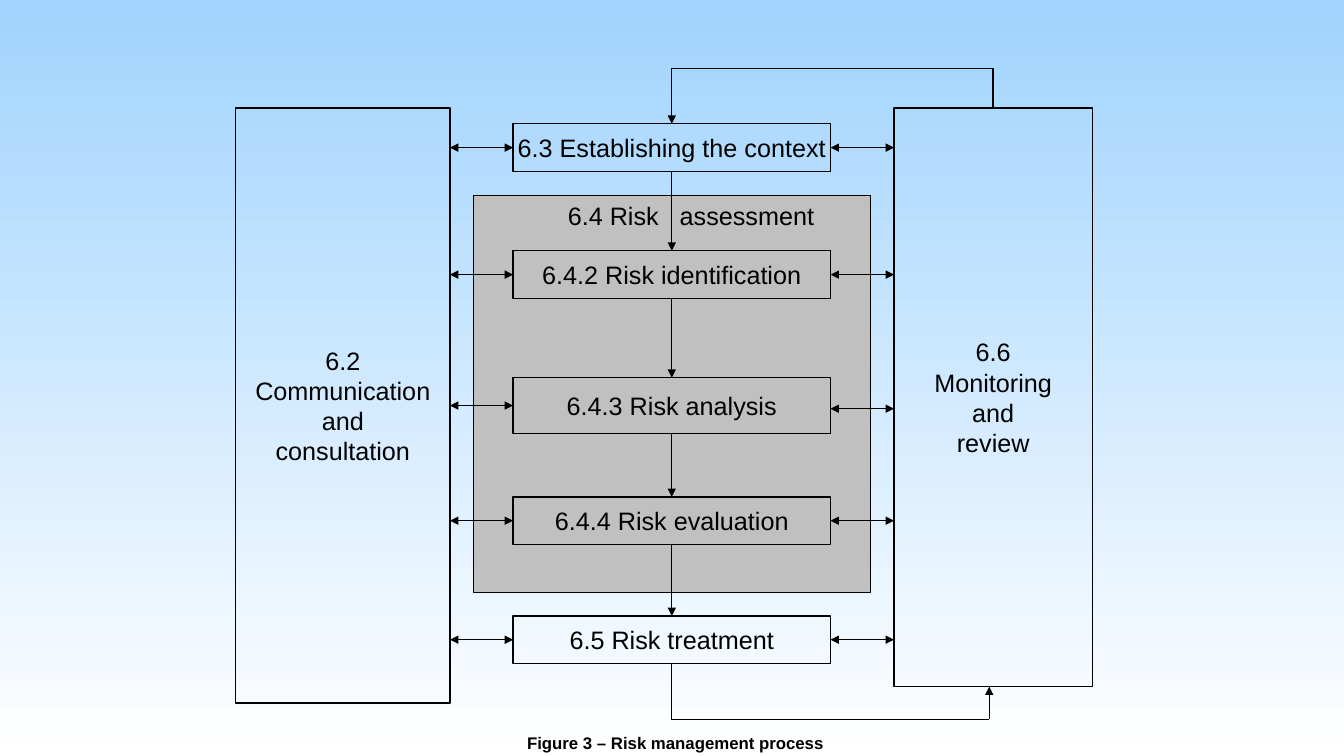
from dataclasses import dataclass
from itertools import pairwise
from typing import NamedTuple

from lxml.etree import SubElement
from pptx import Presentation
from pptx.dml.color import RGBColor
from pptx.enum.shapes import MSO_CONNECTOR as Connector, MSO_SHAPE as Preset
from pptx.enum.text import MSO_ANCHOR as Anchor, PP_ALIGN as Align
from pptx.oxml.ns import qn
from pptx.util import Cm, Pt


@dataclass(frozen=True)
class Theme:
    font: str = "Arial"
    ink: RGBColor = RGBColor(0, 0, 0)
    panel: RGBColor = RGBColor(0xC0, 0xC0, 0xC0)
    sky: RGBColor = RGBColor(0xA0, 0xD3, 0xFE)
    ground: RGBColor = RGBColor(0xFF, 0xFF, 0xFF)
    label_size: int = 18
    caption_size: int = 12
    line_width: int = 1


class Box(NamedTuple):
    """A rectangle in centimetres."""
    left: float
    top: float
    width: float
    height: float

    @property
    def right(self):
        return self.left + self.width

    @property
    def bottom(self):
        return self.top + self.height

    @property
    def center(self):
        return self.left + self.width / 2

    @property
    def middle(self):
        return self.top + self.height / 2

    def lengths(self):
        return [Cm(value) for value in self]


THEME = Theme()
SLIDE_WIDTH, SLIDE_HEIGHT = 33.87, 19.05
COMMUNICATION = Box(5.94, 2.72, 5.4, 15)
MONITORING = Box(22.53, 2.72, 5, 14.58)
ASSESSMENT = Box(11.94, 4.93, 10, 10)
STEP_COLUMN = Box(12.93, 3.12, 8, 13.6)
CAPTION = Box(7.92, 18.34, 18.21, 0.76)
# Label, offset from the column top, height, drop of the arrow to monitoring
STEPS = [
    ("6.3 Establishing the context", 0, 1.2, 0),
    ("6.4.2 Risk identification", 3.2, 1.2, 0),
    ("6.4.3 Risk analysis", 6.4, 1.4, 0.08),
    ("6.4.4 Risk evaluation", 9.4, 1.2, 0),
    ("6.5 Risk treatment", 12.4, 1.2, 0),
]


def write_text(shape, text, *, size=THEME.label_size, bold=False, align=Align.CENTER,
               anchor=Anchor.MIDDLE, wrap=False, indent=None, tab=None):
    """Fill a shape with one paragraph per line of text; indent and tab are in cm."""
    frame = shape.text_frame
    frame.word_wrap = wrap
    frame.vertical_anchor = anchor
    if indent is not None:
        frame.margin_left = Cm(indent)
    for index, line in enumerate(text.split("\n")):
        paragraph = frame.add_paragraph() if index else frame.paragraphs[0]
        paragraph.alignment = align
        if tab is not None:
            tab_list = SubElement(paragraph._p.get_or_add_pPr(), qn("a:tabLst"))
            SubElement(tab_list, qn("a:tab"), pos=str(Cm(tab)), algn="l")
        run = paragraph.add_run()
        run.text = line
        run.font.name = THEME.font
        run.font.size = Pt(size)
        run.font.bold = bold
        run.font.color.rgb = THEME.ink


def add_box(slide, box, text, fill=None, **text_format):
    shape = slide.shapes.add_shape(Preset.RECTANGLE, *box.lengths())
    shape.shadow.inherit = False
    if fill is None:
        shape.fill.background()
    else:
        shape.fill.solid()
        shape.fill.fore_color.rgb = fill
    shape.line.color.rgb = THEME.ink
    shape.line.width = Pt(THEME.line_width)
    write_text(shape, text, **text_format)


def add_line(slide, start, end, *, head=False, tail=False, bent=False):
    """Join two points; a bent line runs horizontally first, then vertically."""
    kind = Connector.ELBOW if bent else Connector.STRAIGHT
    connector = slide.shapes.add_connector(kind, *(Cm(value) for value in (*start, *end)))
    connector.line.color.rgb = THEME.ink
    connector.line.width = Pt(THEME.line_width)
    properties = connector.element.spPr
    if bent:
        properties.find(qn("a:prstGeom")).set("prst", "bentConnector2")
    for wanted, tag in ((head, "a:headEnd"), (tail, "a:tailEnd")):
        if wanted:
            SubElement(properties.find(qn("a:ln")), qn(tag), type="triangle")
    SubElement(properties, qn("a:effectLst"))


def add_background(slide):
    fill = slide.background.fill
    fill.gradient()
    fill.gradient_angle = 270
    for stop, color in zip(fill.gradient_stops, (THEME.sky, THEME.ground)):
        stop.color.rgb = color


def add_steps(slide, column):
    """Place the process steps, the arrows between them and those to both sides."""
    boxes = [Box(column.left, column.top + offset, column.width, height)
             for _, offset, height, _ in STEPS]
    for (label, _, _, drop), box in zip(STEPS, boxes):
        add_box(slide, box, label)
        add_line(slide, (box.left, box.middle), (COMMUNICATION.right, box.middle),
                 head=True, tail=True)
        add_line(slide, (MONITORING.left, box.middle + drop), (box.right, box.middle + drop),
                 head=True, tail=True)
    for upper, lower in pairwise(boxes):
        add_line(slide, (column.center, upper.bottom), (column.center, lower.top), tail=True)


def add_feedback_loop(slide, column, monitoring):
    """Lead from the last step to monitoring and from there back to the first step."""
    top, bottom = monitoring.top - 1, column.bottom + 1.41
    entry = monitoring.center - 0.1
    add_line(slide, (column.center, top), (monitoring.center, monitoring.top), bent=True)
    add_line(slide, (column.center, top), (column.center, column.top), tail=True)
    add_line(slide, (entry, bottom), (column.center, column.bottom), bent=True)
    add_line(slide, (entry, bottom), (entry, monitoring.bottom), tail=True)


def add_caption(slide, box):
    caption = slide.shapes.add_textbox(*box.lengths())
    write_text(caption, "Figure 3 – Risk management process", size=THEME.caption_size,
               bold=True, anchor=Anchor.TOP, wrap=True)


def build_process_slide(presentation):
    slide = presentation.slides.add_slide(presentation.slide_layouts[6])
    add_background(slide)
    add_box(slide, ASSESSMENT, "6.4 Risk\tassessment", fill=THEME.panel,
            align=Align.LEFT, anchor=Anchor.TOP, indent=2.37, tab=2.82)
    add_box(slide, COMMUNICATION, "6.2\nCommunication\nand\nconsultation")
    add_box(slide, MONITORING, "6.6\nMonitoring\nand\nreview")
    add_steps(slide, STEP_COLUMN)
    add_feedback_loop(slide, STEP_COLUMN, MONITORING)
    add_caption(slide, CAPTION)


def main():
    presentation = Presentation()
    presentation.slide_width = Cm(SLIDE_WIDTH)
    presentation.slide_height = Cm(SLIDE_HEIGHT)
    build_process_slide(presentation)
    presentation.save("out.pptx")


if __name__ == "__main__":
    main()
